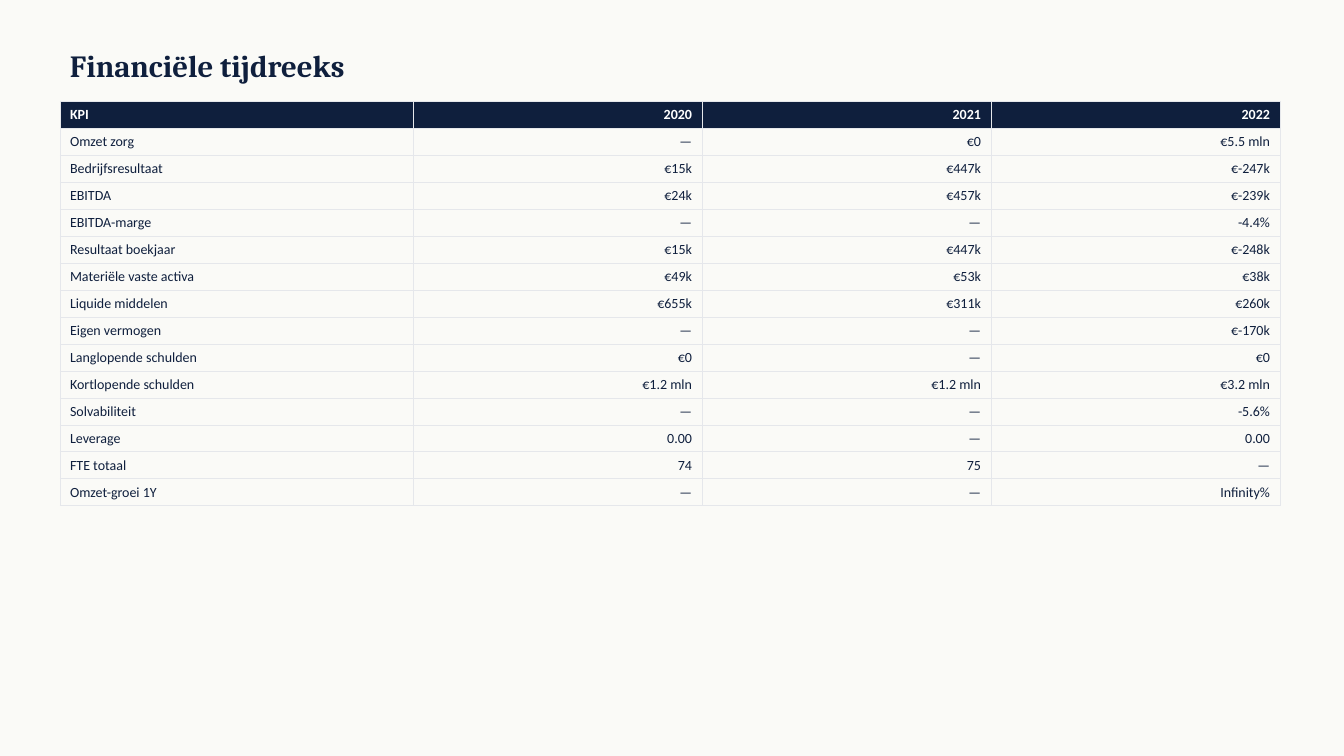
import pptx
import pptx.util
import pptx.dml.color
import pptx.enum.text
import pptx.oxml

SCALE = 914400 / 100.8  # EMU per px
COLORS = {"paper": "FAFAF7", "navy": "0F1F3D", "white": "FFFFFF", "rule": "E5E7EB"}
ALIGN = pptx.enum.text.PP_ALIGN
ANCHOR = pptx.enum.text.MSO_ANCHOR
NS = "http://schemas.openxmlformats.org/drawingml/2006/main"


def px(n):
    return pptx.util.Emu(round(n * SCALE))


def style(font, color, **values):
    for name, value in values.items():
        setattr(font, name, value)
    font.color.rgb = pptx.dml.color.RGBColor.from_string(COLORS[color])


deck = pptx.Presentation()
deck.slide_width, deck.slide_height = px(1344), px(756)
slide = deck.slides.add_slide(deck.slide_layouts[6])
back = slide.background.fill
back.solid()
back.fore_color.rgb = pptx.dml.color.RGBColor.from_string(COLORS["paper"])

# Title
title = slide.shapes.add_textbox(px(60), px(40), px(1210), px(50)).text_frame
title.word_wrap = True
title.vertical_anchor = ANCHOR.MIDDLE
title.text = "Financiële tijdreeks"
style(title.paragraphs[0].font, "navy", name="Cambria", size=pptx.util.Pt(22), bold=True)

# Key figures per year
data = [
    ("KPI", "2020", "2021", "2022"),
    ("Omzet zorg", "—", "€0", "€5.5 mln"),
    ("Bedrijfsresultaat", "€15k", "€447k", "€-247k"),
    ("EBITDA", "€24k", "€457k", "€-239k"),
    ("EBITDA-marge", "—", "—", "-4.4%"),
    ("Resultaat boekjaar", "€15k", "€447k", "€-248k"),
    ("Materiële vaste activa", "€49k", "€53k", "€38k"),
    ("Liquide middelen", "€655k", "€311k", "€260k"),
    ("Eigen vermogen", "—", "—", "€-170k"),
    ("Langlopende schulden", "€0", "—", "€0"),
    ("Kortlopende schulden", "€1.2 mln", "€1.2 mln", "€3.2 mln"),
    ("Solvabiliteit", "—", "—", "-5.6%"),
    ("Leverage", "0.00", "—", "0.00"),
    ("FTE totaal", "74", "75", "—"),
    ("Omzet-groei 1Y", "—", "—", "Infinity%"),
]
widths = [353, 289, 289, 289]
high = 27

# Table grid
frame = slide.shapes.add_table(
    len(data), len(widths), px(60), px(101), px(sum(widths)), px(high * len(data)))
table = frame.table
table.horz_banding = False
for col, width in zip(table.columns, widths):
    col.width = px(width)

# Cells: text, borders, then fill
for r, line in enumerate(data):
    table.rows[r].height = px(high)
    head = r == 0
    for c, text in enumerate(line):
        cell = table.cell(r, c)
        cell.text = text
        para = cell.text_frame.paragraphs[0]
        para.alignment = ALIGN.RIGHT if c else ALIGN.LEFT
        style(para.font, "white" if head else "navy",
              name="Calibri", size=pptx.util.Pt(10), bold=head)
        props = cell._tc.get_or_add_tcPr()
        for side in ("lnL", "lnR", "lnT", "lnB"):
            props.append(pptx.oxml.parse_xml(
                f'<a:{side} xmlns:a="{NS}" w="6350"><a:solidFill>'
                f'<a:srgbClr val="{COLORS["rule"]}"/></a:solidFill></a:{side}>'))
        if head:
            cell.fill.solid()
            cell.fill.fore_color.rgb = pptx.dml.color.RGBColor.from_string(COLORS["navy"])
        else:
            cell.fill.background()

deck.save("out.pptx")
